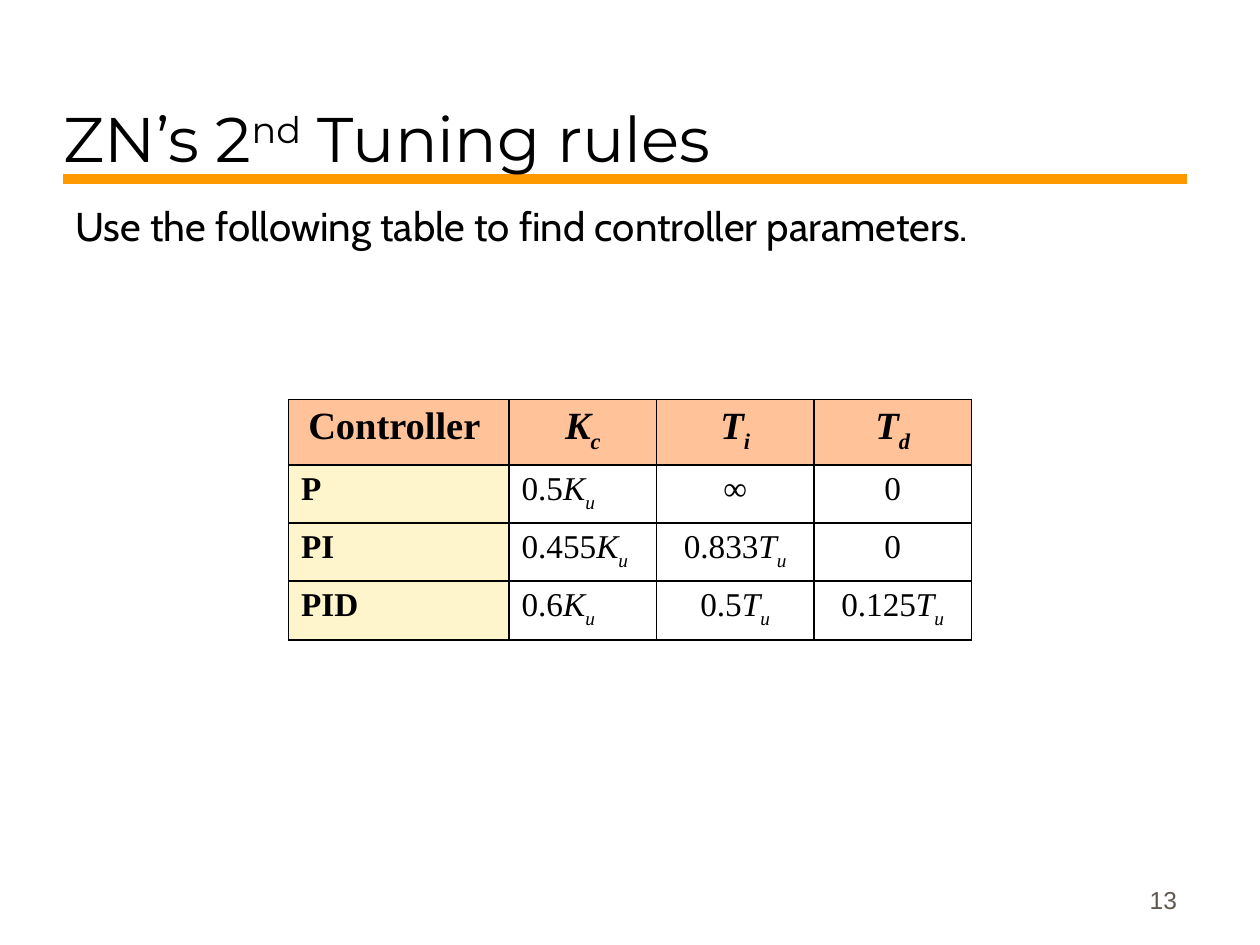
from lxml import etree
from pptx import Presentation, util as u
from pptx.dml.color import RGBColor
from pptx.enum import shapes, text
from pptx.oxml import ns

WIDTH, HEIGHT = 10, 7.5
BLACK, ORANGE, GREY = "000000", "FF9900", "5E574E"
PEACH, CREAM, WHITE = "FFC299", "FFF5CC", "FFFFFF"
SUPERSCRIPT, SUBSCRIPT = 30, -25

# Table cells are written as number|symbol|subscript
RULES = [
    ["Controller ", "|K|c", "|T|i", "|T|d"],
    ["P", "0.5|K|u", "∞", "0"],
    ["PI", "0.455|K|u", "0.833|T|u", "0"],
    ["PID", "0.6|K|u", "0.5|T|u", "0.125|T|u"],
]
COLUMNS = [1.75, 1.17, 1.25, 1.25]
ROWS = [0.52, 0.46, 0.46, 0.47]


def colour(value):
    return RGBColor.from_string(value)


def style(span, font, size, fill=BLACK, bold=False, italic=False, baseline=0):
    span.font.name = font
    span.font.size = u.Pt(size)
    span.font.color.rgb = colour(fill)
    span.font.bold = bold
    span.font.italic = italic
    if baseline:
        span._r.get_or_add_rPr().set("baseline", str(baseline * 1000))


def add_text(page, left, top, width, height, anchor):
    box = page.shapes.add_textbox(*map(u.Inches, (left, top, width, height)))
    box.text_frame.word_wrap = True
    box.text_frame.vertical_anchor = anchor
    return box.text_frame


def add_rule(page, left, right, top):
    line = page.shapes.add_connector(
        shapes.MSO_CONNECTOR.STRAIGHT,
        *map(u.Inches, (left, top, right, top)))
    line.line.color.rgb = colour(ORANGE)
    line.line.width = u.Pt(6)
    etree.SubElement(line._element.spPr, ns.qn("a:effectLst"))


def add_borders(cell):
    properties = cell._tc.get_or_add_tcPr()
    for index, side in enumerate(("lnL", "lnR", "lnT", "lnB")):
        border = etree.Element(ns.qn(f"a:{side}"), w=str(u.Pt(1)))
        fill = etree.SubElement(border, ns.qn("a:solidFill"))
        etree.SubElement(fill, ns.qn("a:srgbClr"), val=BLACK)
        properties.insert(index, border)


def fill_cell(cell, entry, row, column):
    header, label = row == 0, column == 0
    cell.fill.solid()
    cell.fill.fore_color.rgb = colour(
        PEACH if header else CREAM if label else WHITE)
    add_borders(cell)
    para = cell.text_frame.paragraphs[0]
    if header or column > 1:
        para.alignment = text.PP_ALIGN.CENTER
    for part, content in enumerate(entry.split("|")):
        if content:
            span = para.add_run()
            span.text = content
            style(span, "Times New Roman", 22 if header else 19,
                  bold=header or label, italic=part > 0,
                  baseline=SUBSCRIPT if part == 2 else 0)


def add_rules_table(page, left, top):
    table = page.shapes.add_table(
        len(ROWS), len(COLUMNS), u.Inches(left), u.Inches(top),
        u.Inches(sum(COLUMNS)), u.Inches(sum(ROWS))).table
    for column, width in zip(table.columns, COLUMNS):
        column.width = u.Inches(width)
    for row, height in zip(table.rows, ROWS):
        row.height = u.Inches(height)
    for row, entries in enumerate(RULES):
        for column, entry in enumerate(entries):
            fill_cell(table.cell(row, column), entry, row, column)


def main():
    deck = Presentation()
    deck.slide_width, deck.slide_height = u.Inches(WIDTH), u.Inches(HEIGHT)
    page = deck.slides.add_slide(deck.slide_layouts[6])

    # Title over its orange rule
    add_rule(page, 0.5, 9.42, 1.42)
    title = add_text(page, 0.41, 0.61, 8.5, 0.83, text.MSO_ANCHOR.BOTTOM)
    for content, baseline in (("ZN’s 2", 0), ("nd", SUPERSCRIPT),
                              (" Tuning rules", 0)):
        span = title.paragraphs[0].add_run()
        span.text = content
        style(span, "Montserrat", 36, baseline=baseline)

    # Page number
    number = add_text(page, 7.36, 6.81, 2.08, 0.5, text.MSO_ANCHOR.BOTTOM)
    number.text = "13"
    number.paragraphs[0].alignment = text.PP_ALIGN.RIGHT
    style(number.paragraphs[0].runs[0], "Arial", 14, GREY)

    # Tuning table
    add_rules_table(page, 2.29, 3.17)

    # Instruction
    body = add_text(page, 0.5, 1.55, 9, 0.5, text.MSO_ANCHOR.TOP)
    body.auto_size = text.MSO_AUTO_SIZE.SHAPE_TO_FIT_TEXT
    body.text = "Use the following table to find controller parameters."
    para = body.paragraphs[0]
    para.space_before = para.space_after = u.Pt(3)
    style(para.runs[0], "Cabin", 23)

    deck.save("out.pptx")


if __name__ == "__main__":
    main()
